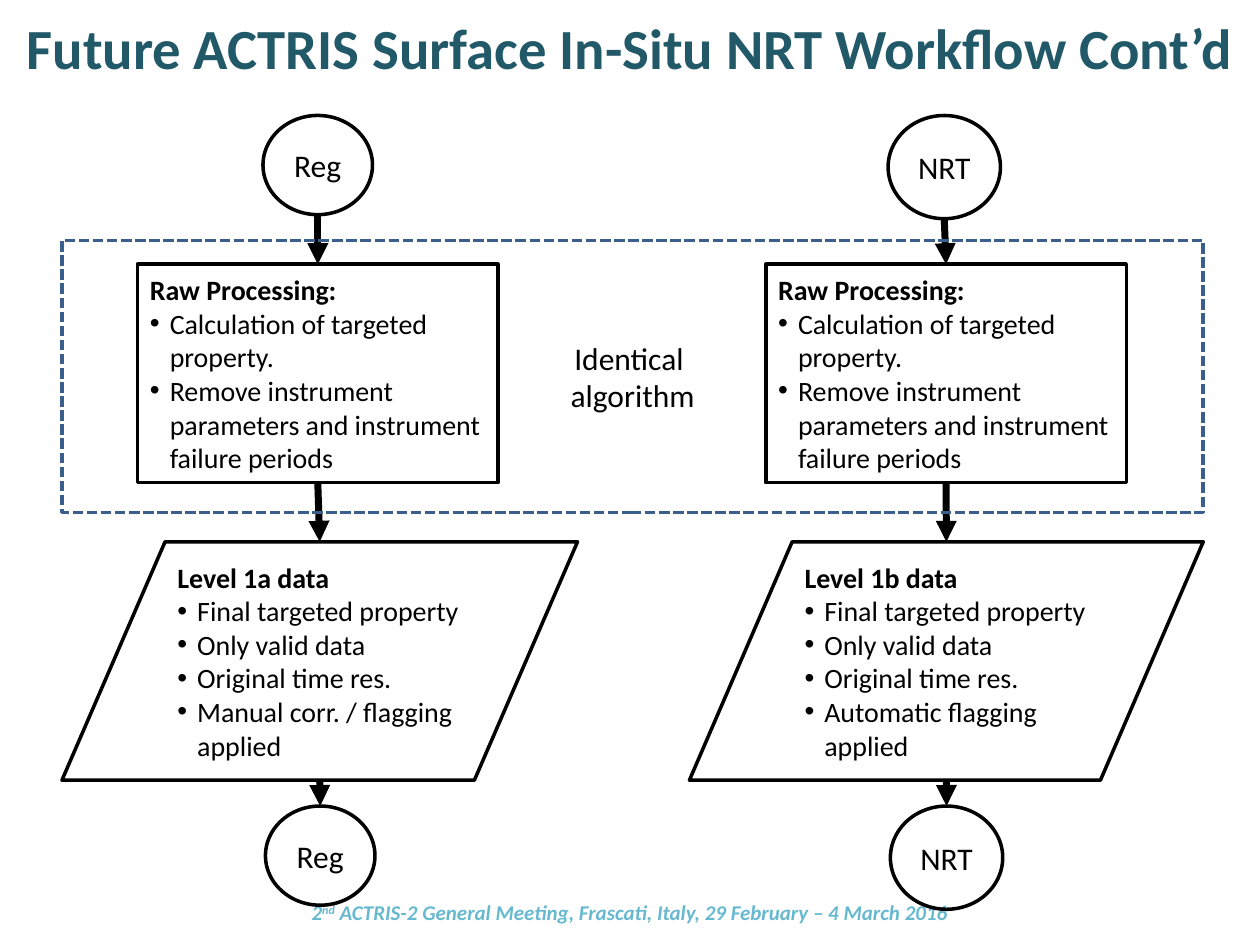
from dataclasses import dataclass

from lxml import etree
from pptx import Presentation
from pptx import util as u
from pptx.dml.color import RGBColor
from pptx.enum import dml, shapes, text
from pptx.oxml import ns


@dataclass(frozen=True)
class Theme:
    font: str = "Calibri"
    ink: str = "000000"
    paper: str = "FFFFFF"
    heading: str = "215968"
    footer: str = "67B9CF"
    frame: str = "3A5F8C"
    heading_size: float = 32.4
    label_size: float = 18
    body_size: float = 16
    footer_size: float = 12
    outline: float = 2
    arrow: float = 4
    indent: float = 11.3


@dataclass(frozen=True)
class Box:
    left: float
    top: float
    width: float
    height: float

    @property
    def middle(self) -> float:
        return self.left + self.width / 2

    @property
    def bottom(self) -> float:
        return self.top + self.height

    def points(self) -> list:
        return [u.Pt(v) for v in (self.left, self.top, self.width, self.height)]


@dataclass(frozen=True)
class Branch:
    """One column of the workflow, from source to destination."""
    name: str
    level: str
    flagging: str
    source: Box
    processing: Box
    data: Box
    destination: Box


THEME = Theme()
KIND = shapes.MSO_SHAPE
CENTER, LEFT = text.PP_ALIGN.CENTER, text.PP_ALIGN.LEFT

PROCESSING_STEPS = [
    "Calculation of targeted property.",
    "Remove instrument parameters and instrument failure periods",
]
DATA_TRAITS = ["Final targeted property", "Only valid data", "Original time res."]

BRANCHES = [
    Branch("Reg", "Level 1a data", "Manual corr. / flagging applied",
           source=Box(150.3, 66, 62.6, 56.7),
           processing=Box(78.6, 151, 206, 124.8),
           data=Box(35.4, 309.6, 294.6, 136.2),
           destination=Box(151.7, 460.6, 62.6, 56.7)),
    Branch("NRT", "Level 1b data", "Automatic flagging applied",
           source=Box(507.5, 66, 64.2, 59),
           processing=Box(437.6, 151, 206, 124.8),
           data=Box(394, 309.6, 293.6, 136.2),
           destination=Box(508.8, 460.6, 64.2, 59)),
]
IDENTICAL_FRAME = Box(35.4, 137.4, 652.2, 155.4)


def add_run(paragraph, words: str, size: float, color: str = THEME.ink, **style):
    run = paragraph.add_run()
    run.text = words
    for name, value in {"name": THEME.font, "size": u.Pt(size), **style}.items():
        setattr(run.font, name, value)
    run.font.color.rgb = RGBColor.from_string(color)
    return run


def add_bullet(paragraph) -> None:
    properties = paragraph._p.get_or_add_pPr()
    indent = u.Pt(THEME.indent)
    for name, value in {"marL": indent, "indent": -indent}.items():
        properties.set(name, str(value))
    etree.SubElement(properties, ns.qn("a:buFont")).set("typeface", "Arial")
    etree.SubElement(properties, ns.qn("a:buChar")).set("char", "•")


def add_paragraphs(frame, count: int, align) -> list:
    paragraphs = [frame.paragraphs[0]] + [frame.add_paragraph() for _ in range(count - 1)]
    for paragraph in paragraphs:
        paragraph.alignment = align
    return paragraphs


def add_outline(slide, kind, box: Box, color: str = THEME.ink, fill: str | None = None):
    shape = slide.shapes.add_shape(kind, *box.points())
    shape.shadow.inherit = False
    if fill:
        shape.fill.solid()
        shape.fill.fore_color.rgb = RGBColor.from_string(fill)
    else:
        shape.fill.background()
    shape.line.color.rgb = RGBColor.from_string(color)
    shape.line.width = u.Pt(THEME.outline)
    shape.text_frame.word_wrap = True
    shape.text_frame.vertical_anchor = text.MSO_ANCHOR.MIDDLE
    return shape


def add_label(shape, lines: list[str]) -> None:
    for paragraph, line in zip(add_paragraphs(shape.text_frame, len(lines), CENTER), lines):
        add_run(paragraph, line, THEME.label_size)


def add_list(shape, heading: str, items: list[str]) -> None:
    first, *rest = add_paragraphs(shape.text_frame, len(items) + 1, LEFT)
    add_run(first, heading, THEME.body_size, bold=True)
    for paragraph, item in zip(rest, items):
        add_bullet(paragraph)
        add_run(paragraph, item, THEME.body_size)


def add_arrow(slide, upper: Box, lower: Box) -> None:
    """Join the bottom centre of one box to the top centre of the next."""
    ends = (upper.middle, upper.bottom, lower.middle, lower.top)
    arrow = slide.shapes.add_connector(
        shapes.MSO_CONNECTOR.STRAIGHT, *[u.Pt(v) for v in ends])
    arrow.line.color.rgb = RGBColor.from_string(THEME.ink)
    arrow.line.width = u.Pt(THEME.arrow)
    etree.SubElement(arrow.line._get_or_add_ln(), ns.qn("a:tailEnd")).set("type", "triangle")
    etree.SubElement(arrow._element.spPr, ns.qn("a:effectLst"))


def add_centered_line(slide, box: Box):
    frame = slide.shapes.add_textbox(*box.points()).text_frame
    frame.word_wrap = True
    return add_paragraphs(frame, 1, CENTER)[0]


def draw_branch(slide, branch: Branch) -> None:
    processing = add_outline(slide, KIND.RECTANGLE, branch.processing, fill=THEME.paper)
    add_list(processing, "Raw Processing:", PROCESSING_STEPS)
    data = add_outline(slide, KIND.FLOWCHART_DATA, branch.data)
    add_list(data, branch.level, DATA_TRAITS + [branch.flagging])
    for end in (branch.source, branch.destination):
        add_label(add_outline(slide, KIND.FLOWCHART_CONNECTOR, end), [branch.name])
    stages = [branch.source, branch.processing, branch.data, branch.destination]
    for upper, lower in zip(stages, stages[1:]):
        add_arrow(slide, upper, lower)


def main() -> None:
    deck = Presentation()
    deck.slide_width, deck.slide_height = u.Pt(720), u.Pt(540)
    slide = deck.slides.add_slide(deck.slide_layouts[6])

    footer = add_centered_line(slide, Box(0, 507, 720, 23.8))
    footer.line_spacing = 1.25
    meeting = " ACTRIS-2 General Meeting, Frascati, Italy, 29 February – 4 March 2016"
    _, ordinal, _ = [
        add_run(footer, words, THEME.footer_size, THEME.footer, bold=True, italic=True)
        for words in ("2", "nd", meeting)]
    ordinal._r.get_or_add_rPr().set("baseline", "30000")

    title = add_centered_line(slide, Box(0, 3.6, 720, 90))
    add_run(title, "Future ACTRIS Surface In-Situ NRT Workflow Cont’d",
            THEME.heading_size, THEME.heading, bold=True)

    for branch in BRANCHES:
        draw_branch(slide, branch)

    identical = add_outline(slide, KIND.RECTANGLE, IDENTICAL_FRAME, THEME.frame)
    identical.line.dash_style = dml.MSO_LINE.SQUARE_DOT
    add_label(identical, ["Identical ", "algorithm"])

    deck.save("out.pptx")


if __name__ == "__main__":
    main()
